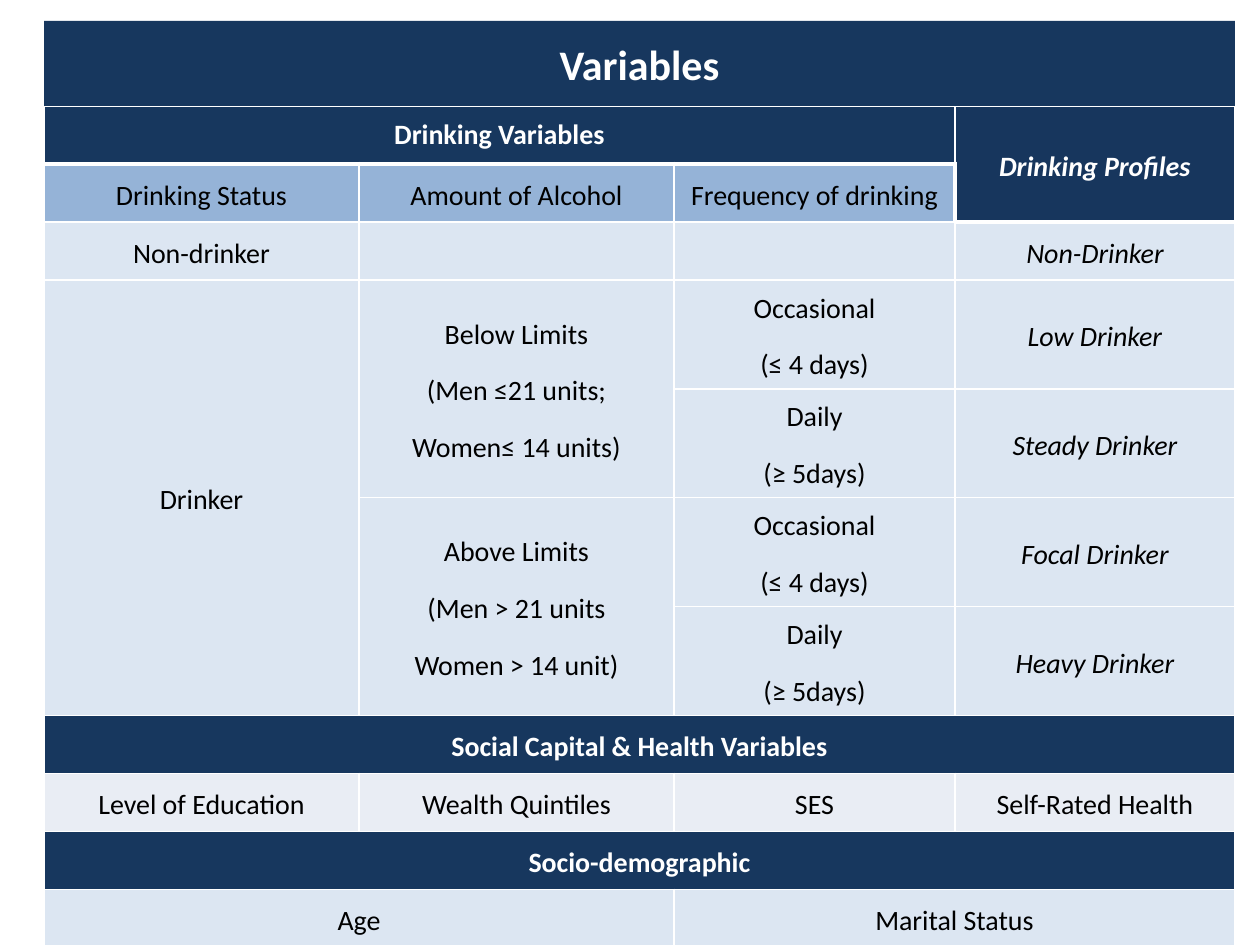
"""Build the slide that tabulates the study variables."""
from dataclasses import dataclass

from lxml import etree
from pptx import Presentation
from pptx import util as u
from pptx.dml.color import RGBColor
from pptx.enum import shapes, text
from pptx.oxml.ns import qn


@dataclass(frozen=True)
class Theme:
    navy: str = "17375E"
    profile_navy: str = "17365D"
    heading: str = "95B3D7"
    body: str = "DCE6F2"
    pale: str = "E9EDF4"
    white: str = "FFFFFF"
    black: str = "000000"
    font: str = "Calibri"
    title_size: int = 24
    cell_size: int = 16


theme = Theme()
PX = 914400 / 126


def px(length):
    return u.Emu(round(length * PX))


def style(paragraph, size, color, bold=False, italic=False):
    paragraph.alignment = text.PP_ALIGN.CENTER
    font = paragraph.font
    font.name, font.size = theme.font, u.Pt(size)
    font.bold, font.italic = bold, italic
    font.color.rgb = RGBColor.from_string(color)


deck = Presentation()
deck.slide_width, deck.slide_height = px(1260), px(945)
slide = deck.slides.add_slide(deck.slide_layouts[6])

left, top, width = 44, 106, 1191
column_widths = [315, 315, 281, 280]
row_heights = [58] * 3 + [95] * 4 + [58] * 4

variables = slide.shapes.add_table(
    len(row_heights), len(column_widths), px(left), px(top), px(width), px(sum(row_heights))
).table
variables.first_row = variables.horz_banding = False
for column, column_width in zip(variables.columns, column_widths):
    column.width = px(column_width)
for row, row_height in zip(variables.rows, row_heights):
    row.height = px(row_height)

occasional = "Occasional\n(≤ 4 days)"
daily = "Daily\n(≥ 5days)"
wording = [
    ["Drinking Variables", "", "", "Drinking Profiles"],
    ["Drinking Status", "Amount of Alcohol", "Frequency of drinking", ""],
    ["Non-drinker", "", "", "Non-Drinker"],
    ["Drinker", "Below Limits\n(Men ≤21 units;\nWomen≤ 14 units)", occasional, "Low Drinker"],
    ["", "", daily, "Steady Drinker"],
    ["", "Above Limits\n(Men > 21 units\nWomen > 14 unit)", occasional, "Focal Drinker"],
    ["", "", daily, "Heavy Drinker"],
    ["Social Capital & Health Variables", "", "", ""],
    ["Level of Education", "Wealth Quintiles", "SES", "Self-Rated Health"],
    ["Socio-demographic", "", "", ""],
    ["Age", "", "Marital Status", ""],
]
merges = [
    (0, 0, 0, 2), (0, 3, 1, 3), (3, 0, 6, 0), (3, 1, 4, 1), (5, 1, 6, 1),
    (7, 0, 7, 3), (9, 0, 9, 3), (10, 0, 10, 1), (10, 2, 10, 3),
]
for first_row, first_column, last_row, last_column in merges:
    variables.cell(first_row, first_column).merge(variables.cell(last_row, last_column))

row_fills = [theme.navy, theme.heading] + [theme.body] * 5 + [
    theme.navy, theme.pale, theme.navy, theme.body]
heavy_edges = {(0, 3, "B"), (1, 3, "L"), (1, 3, "B"), (1, 2, "R"), (2, 3, "T")}
heavy_edges |= {(r, c, side) for r, side in ((0, "B"), (1, "T")) for c in range(3)}

for r, row_words in enumerate(wording):
    for c, words in enumerate(row_words):
        cell = variables.cell(r, c)
        cell.vertical_anchor = text.MSO_ANCHOR.MIDDLE
        cell_properties = cell._tc.get_or_add_tcPr()
        for side in "LRTB":
            weight = 3 if (r, c, side) in heavy_edges else 1
            edge = etree.SubElement(cell_properties, qn(f"a:ln{side}"), w=str(u.Pt(weight)))
            paint = etree.SubElement(edge, qn("a:solidFill"))
            etree.SubElement(paint, qn("a:srgbClr"), val=theme.white)

        profile_heading = c == 3 and r < 2
        banner = row_fills[r] == theme.navy or profile_heading
        cell.fill.solid()
        cell.fill.fore_color.rgb = RGBColor.from_string(
            theme.profile_navy if profile_heading else row_fills[r])

        if not cell.is_spanned:
            cell.text = words
        for paragraph in cell.text_frame.paragraphs:
            style(paragraph, theme.cell_size, theme.white if banner else theme.black,
                  bold=banner, italic=c == 3 and r < 7)
            paragraph.space_after = u.Pt(10)
            if (r, c) != (0, 0):
                paragraph.line_spacing = 1.15

title = slide.shapes.add_shape(shapes.MSO_SHAPE.RECTANGLE, px(left), px(21), px(width), px(85))
title.shadow.inherit = False
title.fill.solid()
title.fill.fore_color.rgb = RGBColor.from_string(theme.navy)
title.line.fill.background()
title.text_frame.word_wrap = True
title.text_frame.vertical_anchor = text.MSO_ANCHOR.MIDDLE
title.text_frame.text = "Variables"
style(title.text_frame.paragraphs[0], theme.title_size, theme.white, bold=True)

deck.save("out.pptx")
